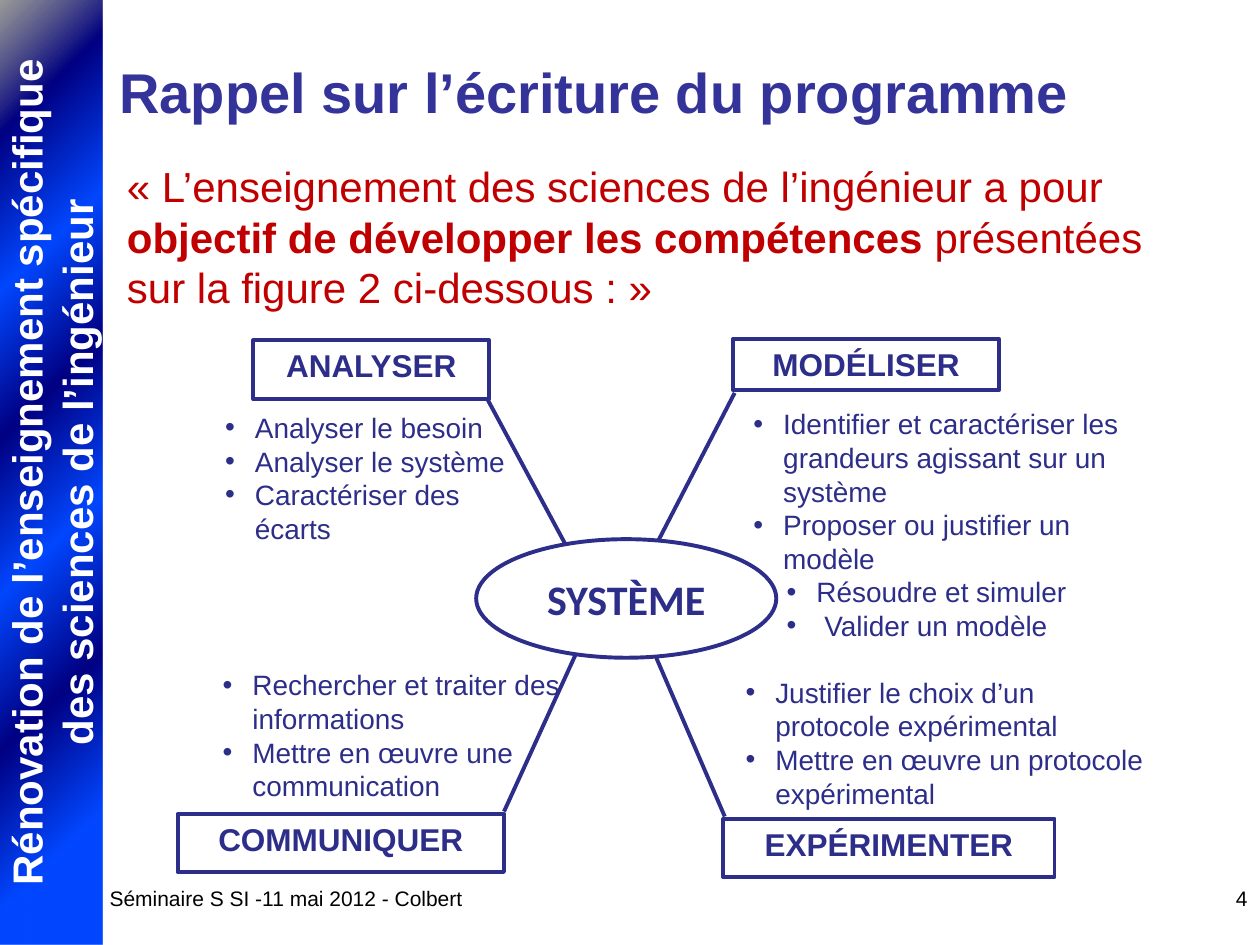
from lxml.etree import SubElement
from pptx import Presentation
from pptx.dml.color import RGBColor
from pptx.enum.shapes import MSO_CONNECTOR, MSO_SHAPE
from pptx.enum.text import MSO_ANCHOR, PP_ALIGN
from pptx.oxml import parse_xml
from pptx.oxml.ns import nsdecls, qn
from pptx.util import Cm, Pt

WHITE = RGBColor(0xFF, 0xFF, 0xFF)
BLACK = RGBColor(0, 0, 0)
INDIGO = RGBColor(0x33, 0x33, 0x99)
NAVY = RGBColor(0x2D, 0x2D, 0x8A)
RED = RGBColor(0xC0, 0, 0)
BRIGHT_BLUE = RGBColor(0, 0x47, 0xFF)
DARK_BLUE = RGBColor(0, 0, 0x82)
GREY = RGBColor(0x66, 0x66, 0x66)

# Position in %, colour, opacity in %
BAR_STOPS = [
    (13, BRIGHT_BLUE, 100), (28, DARK_BLUE, 100), (43, BRIGHT_BLUE, 100),
    (58, DARK_BLUE, 100), (72, BRIGHT_BLUE, 100), (87, DARK_BLUE, 100),
    (100, GREY, 65), (100, BRIGHT_BLUE, 100),
]

# Heading, its box, its line to the system, its skills' box and
# its skills as (text, left margin, hanging indent)
SKILL_AREAS = [
    ("ANALYSER", (5.11, 6.86, 4.75, 1.19), (9.8, 8, 11.66, 11.46),
     (4.29, 8.15, 6.3, 3.15),
     [("Analyser le besoin", 0.6, 0.6),
      ("Analyser le système", 0.6, 0.6),
      ("Caractériser des écarts", 0.6, 0.6)]),
    ("MODÉLISER", (14.78, 6.83, 5.36, 1.04), (14.81, 7.92, 12.98, 11.46),
     (14.94, 8.08, 8.74, 3.99),
     [("Identifier et caractériser les grandeurs agissant sur un système", 0.6, 0.6),
      ("Proposer ou justifier un modèle", 0.6, 0.6),
      ("Résoudre et simuler", 1.27, 0.6),
      ("Valider un modèle", 1.43, 0.76)]),
    ("EXPÉRIMENTER", (14.58, 16.51, 6.68, 1.17), (14.61, 16.46, 13.23, 13.26),
     (14.78, 13.49, 8.7, 2.59),
     [("Justifier le choix d’un protocole expérimental", 0.6, 0.6),
      ("Mettre en œuvre un protocole expérimental", 0.6, 0.6)]),
    ("COMMUNIQUER", (3.58, 16.41, 6.58, 1.17), (10.16, 16.36, 11.61, 13.18),
     (4.24, 13.34, 8.48, 2.54),
     [("Rechercher et traiter des informations", 0.6, 0.6),
      ("Mettre en œuvre une communication", 0.6, 0.6)]),
]


class SlideBuilder:
    font_name = "Arial"
    line_width = Pt(2.25)

    def __init__(self, slide):
        self.slide = slide

    def style(self, paragraph, size, color, bold=False, align=PP_ALIGN.LEFT, font=None):
        paragraph.alignment = align
        for run in paragraph.runs:
            run.font.name = font or self.font_name
            run.font.size = Pt(size)
            run.font.bold = bold
            run.font.color.rgb = color

    def title(self, text, box):
        title = self.slide.shapes.title
        title.left, title.top, title.width, title.height = map(Cm, box)
        title.text_frame.text = text
        title.text_frame.vertical_anchor = MSO_ANCHOR.MIDDLE
        self.style(title.text_frame.paragraphs[0], 32, INDIGO, True, PP_ALIGN.CENTER)

    def text(self, parts, box, size, color, align=PP_ALIGN.LEFT):
        """Add one paragraph made of (text, bold) parts."""
        frame = self.slide.shapes.add_textbox(*map(Cm, box)).text_frame
        frame.word_wrap = True
        paragraph = frame.paragraphs[0]
        for part, _ in parts:
            paragraph.add_run().text = part
        self.style(paragraph, size, color, align=align)
        for run, (_, bold) in zip(paragraph.runs, parts):
            run.font.bold = bold

    def bullets(self, items, box):
        frame = self.slide.shapes.add_textbox(*map(Cm, box)).text_frame
        frame.word_wrap = True
        frame.text = "\n".join(text for text, _, _ in items)
        for paragraph, (_, margin, hanging) in zip(frame.paragraphs, items):
            properties = paragraph._p.get_or_add_pPr()
            properties.set("marL", str(Cm(margin)))
            properties.set("indent", str(-Cm(hanging)))
            SubElement(properties, qn("a:buFont")).set("typeface", "Arial")
            SubElement(properties, qn("a:buChar")).set("char", "•")
            self.style(paragraph, 16, NAVY)

    def node(self, text, box, preset, size, anchor, font=None):
        """Add a white outlined shape with a bold centred label."""
        node = self.slide.shapes.add_shape(preset, *map(Cm, box))
        node.shadow.inherit = False
        node.fill.solid()
        node.fill.fore_color.rgb = WHITE
        node.line.color.rgb = NAVY
        node.line.width = self.line_width
        node.text_frame.text = text
        node.text_frame.vertical_anchor = anchor
        self.style(node.text_frame.paragraphs[0], size, NAVY, True, PP_ALIGN.CENTER, font)

    def link(self, ends):
        link = self.slide.shapes.add_connector(MSO_CONNECTOR.STRAIGHT, *map(Cm, ends))
        link.line.color.rgb = NAVY
        link.line.width = self.line_width
        SubElement(link._element.spPr, qn("a:effectLst"))

    def side_bar(self, text, box):
        bar = self.slide.shapes.add_shape(MSO_SHAPE.RECTANGLE, *map(Cm, box))
        bar.shadow.inherit = False
        bar.line.fill.background()
        stops = "".join(
            f'<a:gs pos="{position * 1000}"><a:srgbClr val="{color}">'
            f'<a:alpha val="{opacity * 1000}"/></a:srgbClr></a:gs>'
            for position, color, opacity in BAR_STOPS)
        gradient = parse_xml(
            f'<a:gradFill {nsdecls("a")} rotWithShape="1"><a:gsLst>{stops}</a:gsLst>'
            '<a:path path="circle"><a:fillToRect l="100000" t="100000"/></a:path>'
            '</a:gradFill>')
        bar._element.spPr.find(qn("a:prstGeom")).addnext(gradient)
        frame = bar.text_frame
        frame.margin_left = frame.margin_right = frame.margin_top = frame.margin_bottom = 0
        frame.vertical_anchor = MSO_ANCHOR.MIDDLE
        frame._txBody.bodyPr.set("vert", "vert270")
        frame.text = text
        for paragraph in frame.paragraphs:
            self.style(paragraph, 24, WHITE, True, PP_ALIGN.CENTER)


def main():
    deck = Presentation()
    deck.slide_width, deck.slide_height = Cm(25.4), Cm(19.05)
    builder = SlideBuilder(deck.slides.add_slide(deck.slide_layouts[5]))

    builder.side_bar("Rénovation de l’enseignement spécifique\ndes sciences de l’ingénieur",
                     (0, 0, 2.06, 19.05))
    builder.title("Rappel sur l’écriture du programme", (2.03, 1.02, 19.91, 1.63))
    builder.text([("« L’enseignement des sciences de l’ingénieur a pour ", False),
                  ("objectif de développer les compétences ", True),
                  ("présentées sur la figure 2 ci-dessous : »", False)],
                 (2.31, 3.12, 21.79, 3.33), 24, RED)

    for heading, heading_box, link_ends, skills_box, skills in SKILL_AREAS:
        builder.link(link_ends)
        builder.bullets(skills, skills_box)
        builder.node(heading, heading_box, MSO_SHAPE.RECTANGLE, 18, MSO_ANCHOR.TOP)
    builder.node("SYSTÈME", (9.6, 10.87, 6.05, 2.39), MSO_SHAPE.OVAL, 24,
                 MSO_ANCHOR.MIDDLE, "Calibri")

    builder.text([("Séminaire S SI -11 mai 2012 - Colbert", False)],
                 (1.96, 17.73, 13.92, 1.32), 12, BLACK)
    builder.text([("4", False)], (19.48, 17.73, 5.92, 1.32), 12, BLACK, PP_ALIGN.RIGHT)
    deck.save("out.pptx")


if __name__ == "__main__":
    main()
